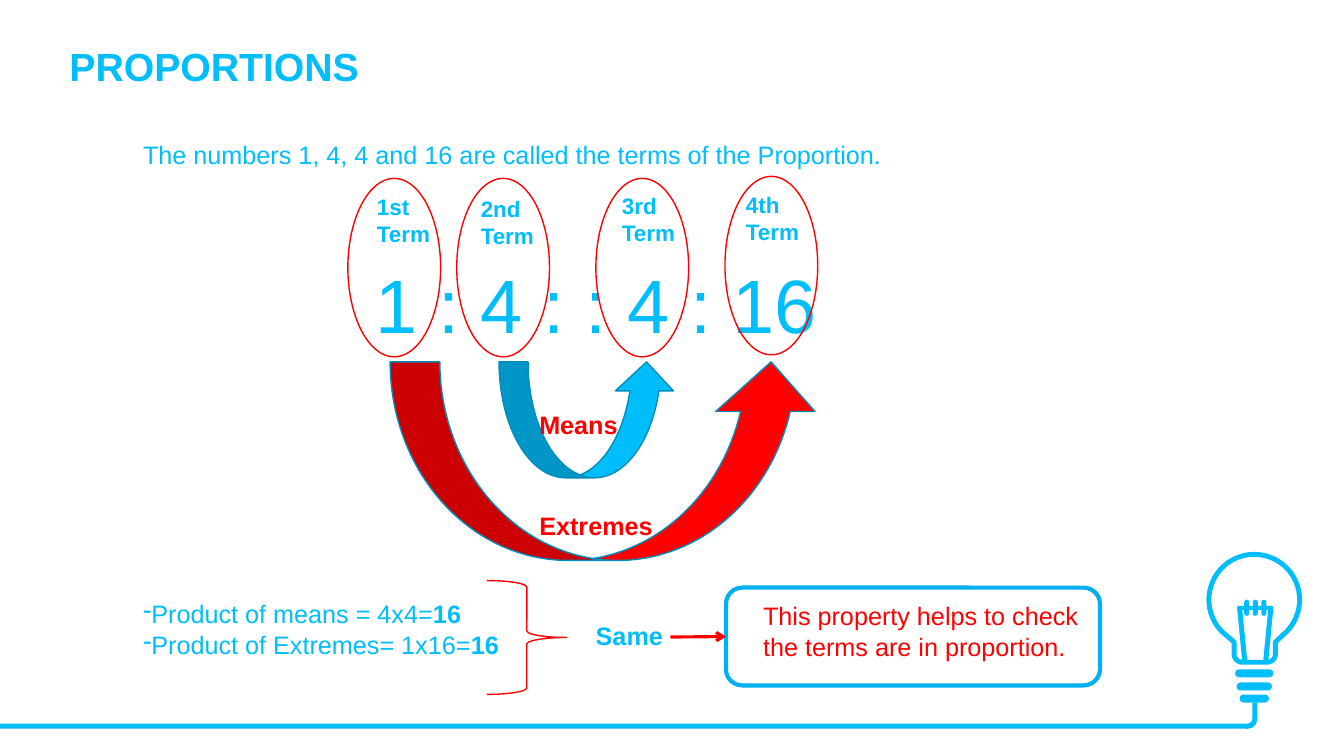
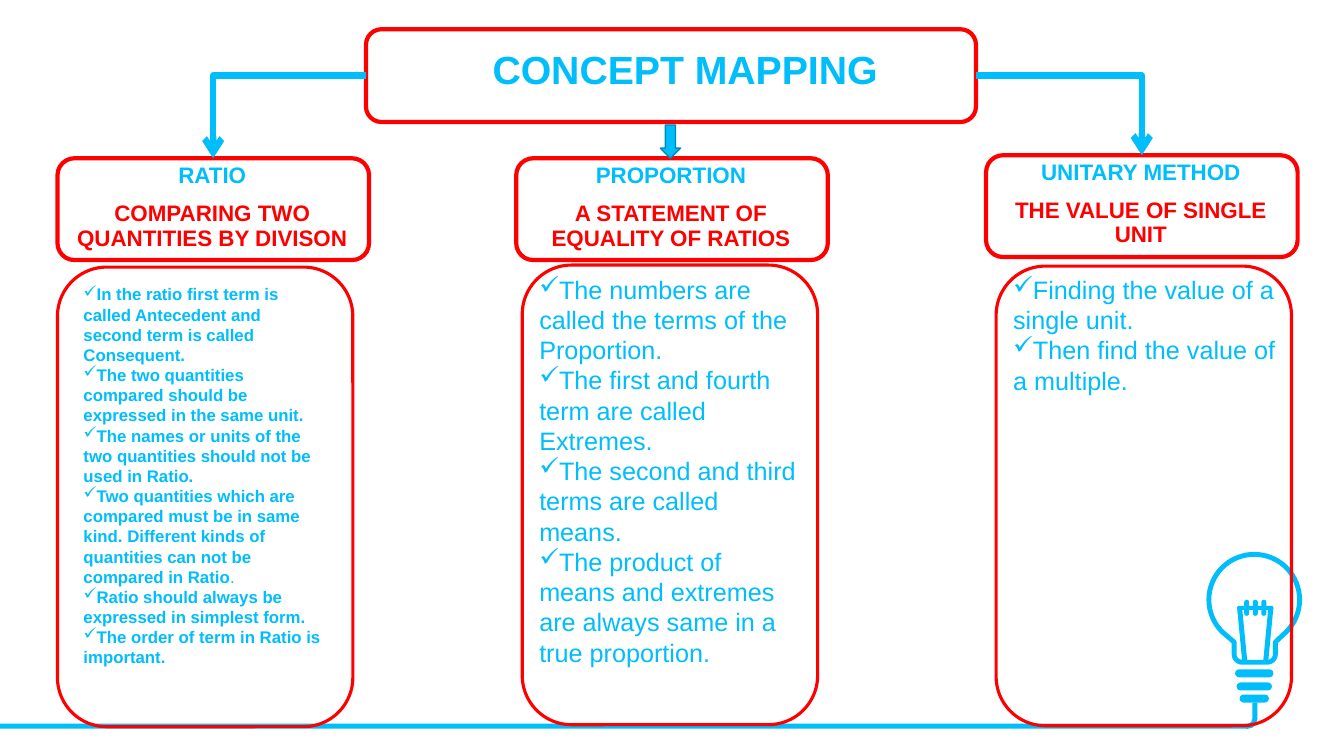
import math

import pptx
import pptx.dml.color
import pptx.enum.shapes
import pptx.enum.text
import pptx.oxml.ns
import pptx.util
from lxml import etree

COLORS = {"sky": "00BDFB", "edge": "008CBA", "frame": "00B0F0",
          "red": "FF0000", "white": "FFFFFF"}
FONT = "Arial"
Inches = pptx.util.Inches
SHAPE = pptx.enum.shapes.MSO_SHAPE
CONNECTOR = pptx.enum.shapes.MSO_CONNECTOR
CENTER = pptx.enum.text.PP_ALIGN.CENTER
MIDDLE = pptx.enum.text.MSO_ANCHOR.MIDDLE
qn = pptx.oxml.ns.qn


def rgb(name):
    return pptx.dml.color.RGBColor.from_string(COLORS[name])


class Deck:
    """Holds the shared style and the slide being drawn."""

    def __init__(self):
        self.presentation = pptx.Presentation()
        self.presentation.slide_width = Inches(13.33)
        self.presentation.slide_height = Inches(7.5)
        self.slide = None

    def new_slide(self):
        self.slide = self.presentation.slides.add_slide(self.presentation.slide_layouts[6])
        self.bulb()

    def paint(self, shape, fill, line, width):
        shape.shadow.inherit = False
        if fill:
            shape.fill.solid()
            shape.fill.fore_color.rgb = rgb(fill)
        else:
            shape.fill.background()
        if line:
            shape.line.color.rgb = rgb(line)
            shape.line.width = pptx.util.Pt(width)
        else:
            shape.line.fill.background()
        return shape

    def shape(self, kind, box, fill=None, line=None, width=1, adjust=()):
        shape = self.slide.shapes.add_shape(kind, *map(Inches, box))
        for index, value in enumerate(adjust):
            shape.adjustments[index] = value
        return self.paint(shape, fill, line, width)

    def pill(self, *box):
        self.shape(SHAPE.ROUNDED_RECTANGLE, box, "sky", adjust=[0.5])

    def outline(self, points, fill, line=None, width=1):
        corners = [(Inches(x), Inches(y)) for x, y in points]
        builder = self.slide.shapes.build_freeform(*corners[0], scale=1.0)
        builder.add_line_segments(corners[1:], close=True)
        return self.paint(builder.convert_to_shape(), fill, line, width)

    def text(self, box, paragraphs, size=18, color="sky", bold=False, align=None,
             anchor=None, bullet=None, spacing=None):
        """A paragraph is a string or a list of (text, bold) runs."""
        frame = self.slide.shapes.add_textbox(*map(Inches, box)).text_frame
        frame.word_wrap = True
        if anchor is not None:
            frame.vertical_anchor = anchor
        for index, content in enumerate(paragraphs):
            paragraph = frame.paragraphs[0] if index == 0 else frame.add_paragraph()
            if bullet:
                properties = paragraph._p.get_or_add_pPr()
                properties.set("marL", "0")
                properties.set("indent", "0")
                etree.SubElement(properties, qn("a:buChar"), char=bullet)
            if spacing:
                paragraph.line_spacing = spacing
            if align is not None:
                paragraph.alignment = align
            paragraph.font.name = FONT
            paragraph.font.size = pptx.util.Pt(size)
            paragraph.font.color.rgb = rgb(color)
            if isinstance(content, str):
                paragraph.font.bold = bold
                paragraph.add_run().text = content
            else:
                for words, strong in content:
                    run = paragraph.add_run()
                    run.text = words
                    run.font.bold = strong
        return frame

    def title(self, box, words, align=None):
        self.text(box, [words], 28, bold=True, align=align, anchor=MIDDLE, spacing=0.9)

    def arrow(self, kind, start, end, color, width):
        link = self.slide.shapes.add_connector(kind, *map(Inches, (*start, *end)))
        link.line.color.rgb = rgb(color)
        link.line.width = pptx.util.Pt(width)
        etree.SubElement(link.line._get_or_add_ln(), qn("a:tailEnd"), type="arrow")
        etree.SubElement(link._element.spPr, qn("a:effectLst"))
        if kind == CONNECTOR.ELBOW:  # a single bend
            link._element.spPr.find(qn("a:prstGeom")).set("prst", "bentConnector2")
        return link

    def bulb(self):
        """Light bulb with its cord along the bottom of the slide."""
        middle, radius = 12.44, 0.45

        def arc(x, y, r, first, last, steps):
            angles = [math.radians(first + (last - first) * i / steps)
                      for i in range(steps + 1)]
            return [(x + r * math.cos(a), y + r * math.sin(a)) for a in angles]

        # Glass: a circle open at the bottom, then a rounded neck
        glass = arc(middle, 5.95, radius, 135, 405, 48)
        glass += [(12.65, 6.37)] + arc(12.57, 6.49, 0.08, 0, 90, 6)
        glass += arc(12.32, 6.49, 0.08, 90, 180, 6) + [(12.24, 6.37)]
        self.outline(glass, "white", "sky", 3.5)

        # Screw base
        for top, width in ((6.64, 0.38), (6.77, 0.35), (6.89, 0.29)):
            self.pill(middle - width / 2, top, width, 0.08)

        # Filament: crossbar, prongs and two legs
        self.pill(12.27, 6.01, 0.36, 0.04)
        for prong in range(3):
            self.pill(12.34 + 0.085 * prong, 5.95, 0.05, 0.16)
        leg = [(0.18, 6.03), (0.13, 6.03), (0.08, 6.55), (0.1, 6.58), (0.13, 6.55)]
        for side in (-1, 1):
            self.outline([(12.45 + side * x, y) for x, y in leg], "sky")

        # Cord
        self.shape(SHAPE.RECTANGLE, (0, 7.18, 12.37, 0.05), "sky")
        self.shape(SHAPE.RECTANGLE, (12.42, 6.97, 0.05, 0.17), "sky")
        self.shape(SHAPE.BLOCK_ARC, (12.28, 7.04, 0.19, 0.19), "sky",
                   adjust=[213.394, 60.915, 0.271])


def proportions(deck):
    deck.new_slide()
    deck.title((0.59, 0.29, 3.32, 0.79), "PROPORTIONS")
    deck.text((1.32, 1.33, 7.68, 0.4),
              ["The numbers 1, 4, 4 and 16 are called the terms of the Proportion."])
    deck.text((3.63, 2.51, 4.88, 1.01), ["1 : 4 : : 4 : 16"], 54)

    # Terms: label position, then ring position
    terms = [("1st", 3.64, 1.87, 3.45, 1.77), ("2nd", 4.67, 1.89, 4.53, 1.77),
             ("3rd", 6.07, 1.86, 5.91, 1.77), ("4th", 7.3, 1.85, 7.19, 1.75)]
    for order, left, top, ring_left, ring_top in terms:
        deck.text((left, top, 0.75, 0.64), [f"{order} Term"], 16, bold=True)
        deck.shape(SHAPE.OVAL, (ring_left, ring_top, 0.92, 1.77), line="red")

    # Means and extremes
    for words, top, width, sweep, fill in (
            ("Means", 4.01, 1.11, (4.95, 3.59, 1.75, 1.15), "sky"),
            ("Extremes", 5.01, 1.51, (3.87, 3.59, 4.27, 1.97), "red")):
        deck.shape(SHAPE.CURVED_UP_ARROW, sweep, fill, "edge")
        deck.text((5.25, top, width, 0.4), [words], color="red", bold=True)

    # Both products agree
    deck.text((1.32, 5.89, 7.28, 0.71),
              [[("Product of means = 4x4=", False), ("16", True)],
               [("Product of Extremes= 1x16=", False), ("16", True)]], bullet="-")
    deck.shape(SHAPE.RIGHT_BRACE, (4.83, 5.76, 0.79, 1.13), line="red")
    deck.text((5.81, 6.11, 0.91, 0.4), ["Same"], bold=True)
    deck.text((7.47, 5.91, 3.37, 0.71),
              ["This property helps to check the terms are in proportion."], color="red")
    check = deck.shape(SHAPE.ROUNDED_RECTANGLE, (7.2, 5.83, 3.71, 0.97),
                       line="frame", width=3)
    link = deck.arrow(CONNECTOR.STRAIGHT, (6.65, 6.32), (7.2, 6.32), "red", 2.25)
    link.end_connect(check, 1)


def concept_map(deck):
    deck.new_slide()
    deck.title((3.81, 0.32, 5.97, 0.79), "CONCEPT MAPPING", CENTER)
    root = deck.shape(SHAPE.ROUNDED_RECTANGLE, (3.63, 0.29, 6.05, 0.92),
                      line="red", width=3)

    # Concepts: heading, meaning, heading place, panel place
    concepts = [
        ("RATIO", "COMPARING TWO QUANTITIES BY DIVISON", (0.57, 1.57), (0.57, 2.65)),
        ("PROPORTION", "A STATEMENT OF EQUALITY OF RATIOS", (5.12, 1.57), (5.18, 2.63)),
        ("UNITARY METHOD", "THE VALUE OF SINGLE UNIT", (9.78, 1.54), (9.88, 2.64)),
    ]
    branches = []
    for name, meaning, (left, top), panel in concepts:
        branches.append(deck.shape(SHAPE.ROUNDED_RECTANGLE, (left, top, 3.09, 1.01),
                                   line="red", width=3))
        heading = deck.text((left + 0.08, top + 0.06, 2.91, 0.86), [name, meaning], 16,
                            bold=True, align=CENTER, anchor=MIDDLE, spacing=0.9)
        heading.paragraphs[1].space_before = pptx.util.Pt(10)
        heading.paragraphs[1].font.color.rgb = rgb("red")
        deck.shape(SHAPE.ROUNDED_RECTANGLE, (*panel, 2.93, 4.56), line="red", width=2.25)

    # Branch arrows
    deck.shape(SHAPE.DOWN_ARROW, (6.55, 1.24, 0.2, 0.33), "sky", "edge")
    for branch, side, start, end in ((branches[0], 1, (3.63, 0.75), (2.11, 1.57)),
                                     (branches[2], 3, (9.68, 0.75), (11.32, 1.54))):
        link = deck.arrow(CONNECTOR.ELBOW, start, end, "sky", 4.5)
        link.begin_connect(root, side)
        link.end_connect(branch, 0)

    # Key points
    deck.text((0.73, 2.77, 2.57, 4.1), [
        "In the ratio first term is called Antecedent and second term is called Consequent.",
        "The two quantities compared should be expressed in the same unit.",
        "The names or units of the two quantities should not be used in Ratio.",
        [("Two quantities which are compared must be in same kind. "
          "Different kinds of quantities can not be compared in Ratio", True), (".", False)],
        "Ratio should always be expressed in simplest form.",
        "The order of term in Ratio is important.",
    ], 12, bold=True, bullet="✓")
    deck.text((5.25, 2.67, 2.81, 4.34), [
        "The numbers are called the terms of the Proportion.",
        "The first and fourth term are called Extremes.",
        "The second and third terms are called means.",
        "The product of means and extremes are always same in a true proportion.",
    ], bullet="✓")
    deck.text((9.95, 2.67, 2.81, 1.62), [
        "Finding the value of a single unit.",
        "Then find the value of a multiple.",
    ], bullet="✓")


def main():
    deck = Deck()
    proportions(deck)
    concept_map(deck)
    deck.presentation.save("out.pptx")


if __name__ == "__main__":
    main()
